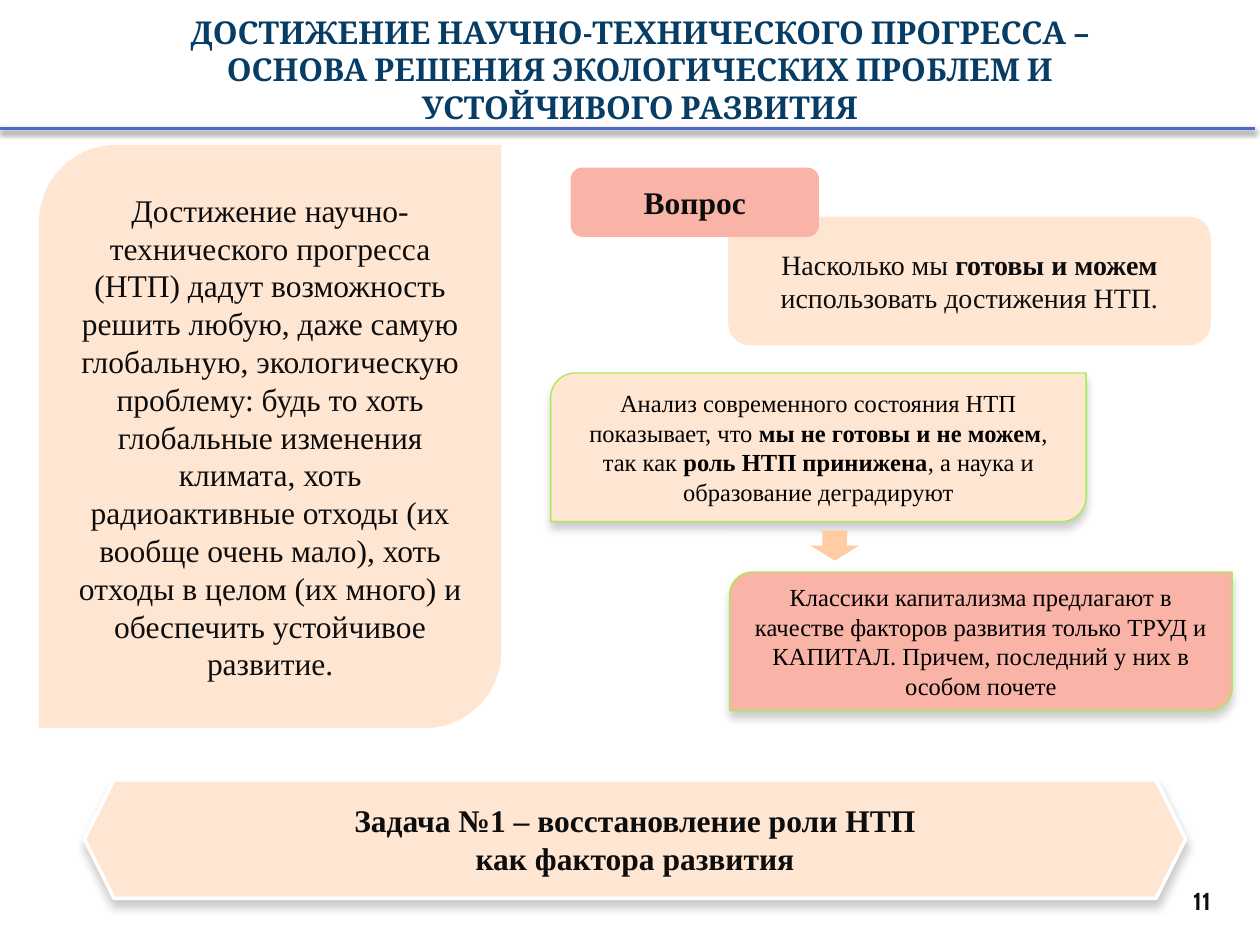
"""Build a slide on scientific and technical progress as the basis of ecology."""
from dataclasses import dataclass

from lxml.etree import SubElement as Sub
from pptx import Presentation
from pptx.dml.color import RGBColor as Rgb
from pptx.enum.shapes import MSO_CONNECTOR as Link, MSO_SHAPE as Kind
from pptx.enum.text import MSO_ANCHOR as Anchor, MSO_AUTO_SIZE as Auto, PP_ALIGN as Align
from pptx.oxml.ns import qn
from pptx.util import Pt

PX = 9144


@dataclass(frozen=True)
class Theme:
    navy: str = "073C65"
    ink: str = "0D0D0D"
    black: str = "000000"
    white: str = "FFFFFF"
    peach: str = "FFE6D3"
    rose: str = "F9B3A7"
    tan: str = "FFCCA6"
    lime: str = "A7EA52"
    blue: str = "4E67C8"
    head: str = "Cambria"
    body: str = "Times New Roman"
    num: str = "Cabin"
    big: int = 18
    mid: int = 16
    small: int = 14


def write(frame, text, face, size, color, bold=False, align=Align.CENTER):
    """Fill a frame, one paragraph a line, with **marked** parts in bold."""
    frame.word_wrap = True
    frame.auto_size = Auto.NONE
    frame.vertical_anchor = Anchor.MIDDLE
    for i, line in enumerate(text.split("\n")):
        para = frame.paragraphs[0] if i == 0 else frame.add_paragraph()
        para.alignment = align
        font = para.font
        font.name, font.size, font.bold = face, Pt(size), bold
        font.color.rgb = Rgb.from_string(color)
        for j, part in enumerate(line.split("**")):
            run = para.add_run()
            run.text = part
            if j % 2:
                run.font.bold = True


def shade(shape, alpha, blur, dist):
    """Give a shape a black shadow straight below it."""
    props = shape._element.spPr
    for old in props.findall(qn("a:effectLst")):
        props.remove(old)
    outer = Sub(Sub(props, qn("a:effectLst")), qn("a:outerShdw"), blurRad=str(Pt(blur)),
                dist=str(Pt(dist)), dir="5400000", rotWithShape="0")
    color = Sub(outer, qn("a:srgbClr"), val=T.black)
    Sub(color, qn("a:alpha"), val=str(alpha * 1000))


T = Theme()
deck = Presentation()
deck.slide_width, deck.slide_height = 1000 * PX, 750 * PX
slide = deck.slides.add_slide(deck.slide_layouts[5])
shapes = slide.shapes

title = shapes.title
title.left, title.top, title.width, title.height = 16 * PX, 0, 984 * PX, 110 * PX
write(title.text_frame, "ДОСТИЖЕНИЕ НАУЧНО-ТЕХНИЧЕСКОГО ПРОГРЕССА –\n"
      "ОСНОВА РЕШЕНИЯ ЭКОЛОГИЧЕСКИХ ПРОБЛЕМ И\nУСТОЙЧИВОГО РАЗВИТИЯ",
      T.head, T.big, T.navy, True)

cards = [
    (Kind.ROUND_2_DIAG_RECTANGLE, (31, 115, 367, 463), T.peach, None, 0, T.big, T.ink, False,
     "Достижение научно-технического прогресса (НТП) дадут возможность решить любую, "
     "даже самую глобальную, экологическую проблему: будь то хоть глобальные изменения "
     "климата, хоть радиоактивные отходы (их вообще очень мало), хоть отходы в целом "
     "(их много) и обеспечить устойчивое развитие."),
    (Kind.ROUNDED_RECTANGLE, (578, 172, 383, 102), T.peach, None, 0, T.mid, T.ink, False,
     "Насколько мы **готовы и можем** использовать достижения НТП."),
    (Kind.ROUNDED_RECTANGLE, (453, 133, 197, 55), T.rose, None, 0, T.big, T.ink, True,
     "Вопрос"),
    (Kind.ROUND_2_DIAG_RECTANGLE, (437, 296, 425, 118), T.peach, T.lime, 0.75, T.small,
     T.black, False,
     "Анализ современного состояния НТП показывает, что **мы не готовы и не можем**, "
     "так как **роль НТП принижена**, а наука и образование деградируют"),
    (Kind.ROUND_2_DIAG_RECTANGLE, (579, 454, 399, 110), T.rose, T.lime, 0.75, T.small,
     T.black, False,
     "Классики капитализма предлагают в качестве факторов развития только ТРУД и КАПИТАЛ. "
     "Причем, последний у них в особом почете"),
    (Kind.DOWN_ARROW, (643, 421, 39, 24), T.tan, None, 0, T.small, T.ink, False, ""),
    (Kind.HEXAGON, (67, 619, 874, 94), T.peach, T.white, 2, T.big, T.ink, True,
     "Задача №1 – восстановление роли НТП\nкак фактора развития"),
]
for kind, box, fill, edge, width, size, color, bold, text in cards:
    card = shapes.add_shape(kind, *(n * PX for n in box))
    card.shadow.inherit = False
    card.fill.solid()
    card.fill.fore_color.rgb = Rgb.from_string(fill)
    if edge:
        card.line.color.rgb = Rgb.from_string(edge)
        card.line.width = Pt(width)
        shade(card, 20, 5, 4)
    else:
        card.line.fill.background()
    if text:
        write(card.text_frame, text, T.body, size, color, bold)

page = shapes.add_textbox(922 * PX, 694 * PX, 49 * PX, 41 * PX)
write(page.text_frame, "11", T.num, T.small, T.ink, True, Align.RIGHT)

rule = shapes.add_connector(Link.STRAIGHT, 0, 102 * PX, 996 * PX, 102 * PX)
rule.line.color.rgb = Rgb.from_string(T.blue)
rule.line.width = Pt(2)
shade(rule, 45, 3.1, 1.8)

deck.save("out.pptx")
